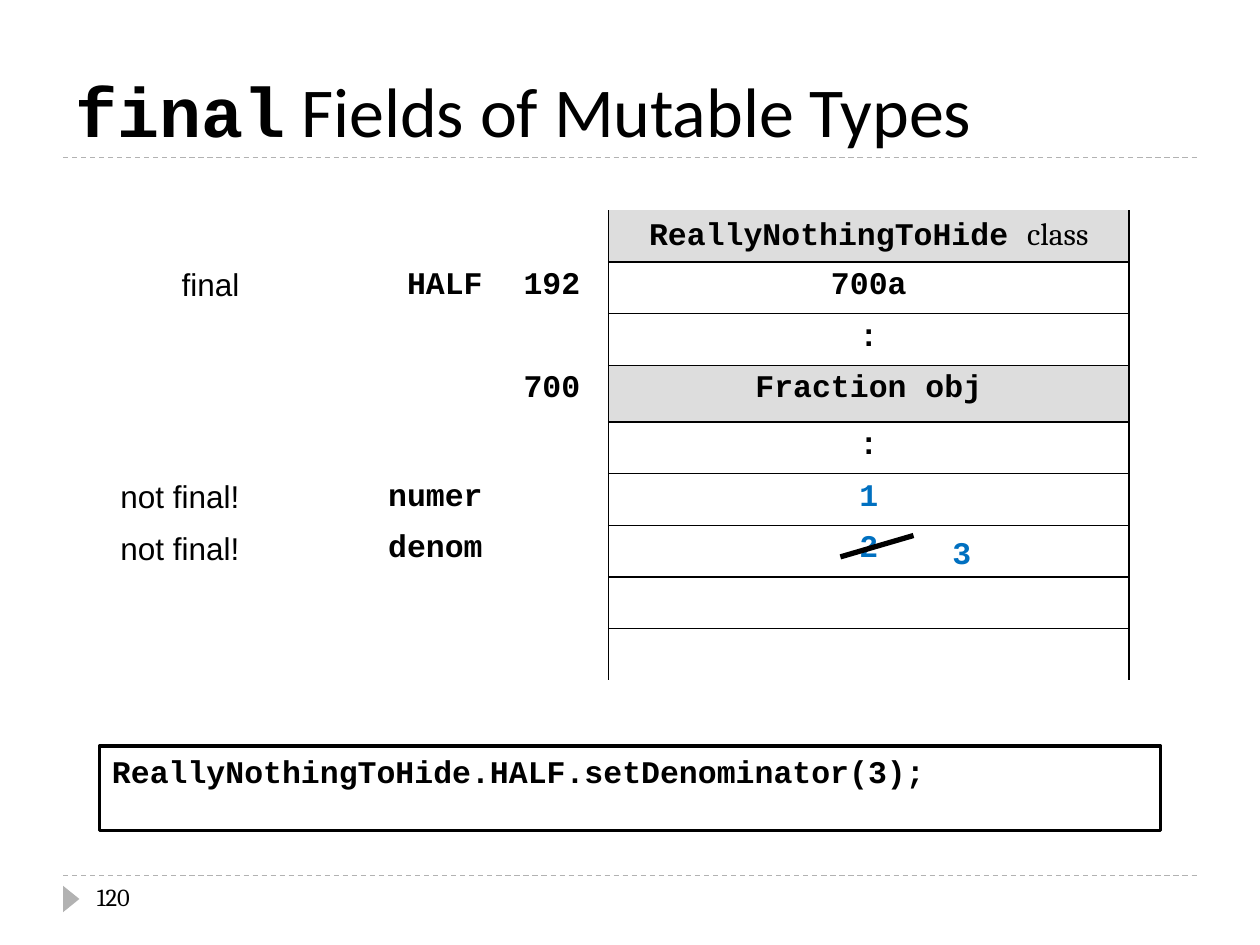
from typing import NamedTuple

from lxml.etree import SubElement
from pptx import Presentation
from pptx.dml.color import RGBColor
from pptx.enum.dml import MSO_LINE
from pptx.enum.shapes import MSO_CONNECTOR, MSO_SHAPE
from pptx.enum.text import MSO_ANCHOR, MSO_AUTO_SIZE, PP_ALIGN
from pptx.oxml.ns import qn
from pptx.util import Inches, Pt

CODE, SANS, SERIF = "Courier New", "Arial", "Cambria"
BLACK, WHITE, GRAY, SHADE, BLUE = "000000", "FFFFFF", "B2B2B2", "DDDDDD", "0070C0"
LEFT, CENTER, RIGHT = PP_ALIGN.LEFT, PP_ALIGN.CENTER, PP_ALIGN.RIGHT


class MemoryRow(NamedTuple):
    note: str = ""
    name: str = ""
    address: str = ""
    value: str = ""
    color: str = BLACK
    fill: str = ""
    height: float = 0.41


MEMORY = [
    MemoryRow(value="ReallyNothingToHide ", fill=SHADE),
    MemoryRow("final", "HALF", "192", "700a"),
    MemoryRow(value=":"),
    MemoryRow(address="700", value="Fraction obj", fill=SHADE, height=0.45),
    MemoryRow(value=":"),
    MemoryRow("not final!", "numer", value="1", color=BLUE),
    MemoryRow("not final!", "denom", value="2", color=BLUE),
    MemoryRow(),
    MemoryRow(),
]
COLUMN_WIDTHS = [1.21, 1.93, 0.9, 4.13]


def rgb(color: str) -> RGBColor:
    return RGBColor.from_string(color)


def add_text(frame, text: str, *, font=CODE, size=18, color=BLACK, bold=True, align=LEFT) -> None:
    """Append a formatted run to the first paragraph of the frame."""
    para = frame.paragraphs[0]
    para.alignment = align
    span = para.add_run()
    span.text = text
    span.font.name = font
    span.font.size = Pt(size)
    span.font.bold = bold
    span.font.color.rgb = rgb(color)


def add_line(shapes, start: tuple, end: tuple, color: str, width: float, dash=None) -> None:
    line = shapes.add_connector(MSO_CONNECTOR.STRAIGHT, *map(Inches, start + end))
    line.line.color.rgb = rgb(color)
    line.line.width = Pt(width)
    if dash is not None:
        line.line.dash_style = dash
    SubElement(line._element.spPr, qn("a:effectLst"))


def add_shape(shapes, kind: MSO_SHAPE, place: tuple, fill: str, outline: str = ""):
    shape = shapes.add_shape(kind, *map(Inches, place))
    shape.shadow.inherit = False
    shape.fill.solid()
    shape.fill.fore_color.rgb = rgb(fill)
    if outline:
        shape.line.color.rgb = rgb(outline)
        shape.line.width = Pt(2)
    else:
        shape.line.fill.background()
    return shape


def add_text_box(shapes, place: tuple, text: str, **style) -> None:
    box = shapes.add_textbox(*map(Inches, place))
    box.text_frame.word_wrap = False
    add_text(box.text_frame, text, **style)


def set_cell(cell, fill: str, borders: str) -> None:
    """Fill the cell and draw black borders on the sides named by the letters L, R, T, B."""
    properties = cell._tc.get_or_add_tcPr()
    for side in "LRTB":
        edge = SubElement(properties, qn(f"a:ln{side}"), w=str(Pt(1)))
        if side in borders:
            SubElement(SubElement(edge, qn("a:solidFill")), qn("a:srgbClr"), val=BLACK)
        else:
            SubElement(edge, qn("a:noFill"))
    if fill:
        cell.fill.solid()
        cell.fill.fore_color.rgb = rgb(fill)
    else:
        cell.fill.background()


def add_memory_table(shapes) -> None:
    height = sum(row.height for row in MEMORY)
    place = (0.79, 1.67, sum(COLUMN_WIDTHS), height)
    table = shapes.add_table(len(MEMORY), len(COLUMN_WIDTHS), *map(Inches, place)).table
    table.first_row = table.horz_banding = False
    for column, width in zip(table.columns, COLUMN_WIDTHS):
        column.width = Inches(width)

    last = len(MEMORY) - 1
    for index, row in enumerate(MEMORY):
        table.rows[index].height = Inches(row.height)
        note, name, address, value = table.rows[index].cells
        set_cell(note, WHITE, "")
        set_cell(name, WHITE, "")
        set_cell(address, WHITE, "R")
        set_cell(value, row.fill, "LR" + "T" * (index > 0) + "B" * (index < last))
        if row.note:
            add_text(note.text_frame, row.note, font=SANS, bold=False, align=RIGHT)
        if row.name:
            add_text(name.text_frame, row.name, align=RIGHT)
        if row.address:
            add_text(address.text_frame, row.address, align=CENTER)
        if row.value:
            add_text(value.text_frame, row.value, color=row.color, align=CENTER)
    add_text(table.cell(0, 3).text_frame, "class", font=SERIF, bold=False, align=CENTER)


def set_title(title) -> None:
    title.left, title.top, title.width, title.height = map(Inches, (0.5, 0.25, 9, 1))
    frame = title.text_frame
    frame.vertical_anchor = MSO_ANCHOR.BOTTOM
    frame.auto_size = MSO_AUTO_SIZE.NONE
    add_text(frame, "final", size=40)
    add_text(frame, " Fields of Mutable Types", font="Calibri", size=40, bold=False)


def main() -> None:
    deck = Presentation()
    deck.slide_width, deck.slide_height = Inches(10), Inches(7.5)
    page = deck.slides.add_slide(deck.slide_layouts[5])
    shapes = page.shapes

    for y in (6.95, 1.25):
        add_line(shapes, (0.5, y), (9.5, y), GRAY, 0.75, MSO_LINE.DASH)
    marker = add_shape(shapes, MSO_SHAPE.ISOSCELES_TRIANGLE, (0.46, 7.07, 0.21, 0.13), GRAY)
    marker.rotation = 90
    set_title(shapes.title)
    add_text_box(shapes, (0.67, 6.95, 2.17, 0.4), "120", font=SERIF, size=14, bold=False)

    add_memory_table(shapes)

    statement = add_shape(shapes, MSO_SHAPE.RECTANGLE, (0.79, 5.92, 8.42, 0.67), WHITE, BLACK)
    statement.text_frame.word_wrap = False
    statement.text_frame.vertical_anchor = MSO_ANCHOR.TOP
    add_text(statement.text_frame, "ReallyNothingToHide.HALF.setDenominator(3);")

    correction = shapes.add_group_shape().shapes
    add_text_box(correction, (7.46, 4.18, 0.35, 0.4), "3", color=BLUE)
    add_line(correction, (6.67, 4.42), (7.25, 4.25), BLACK, 3)

    deck.save("out.pptx")


if __name__ == "__main__":
    main()
